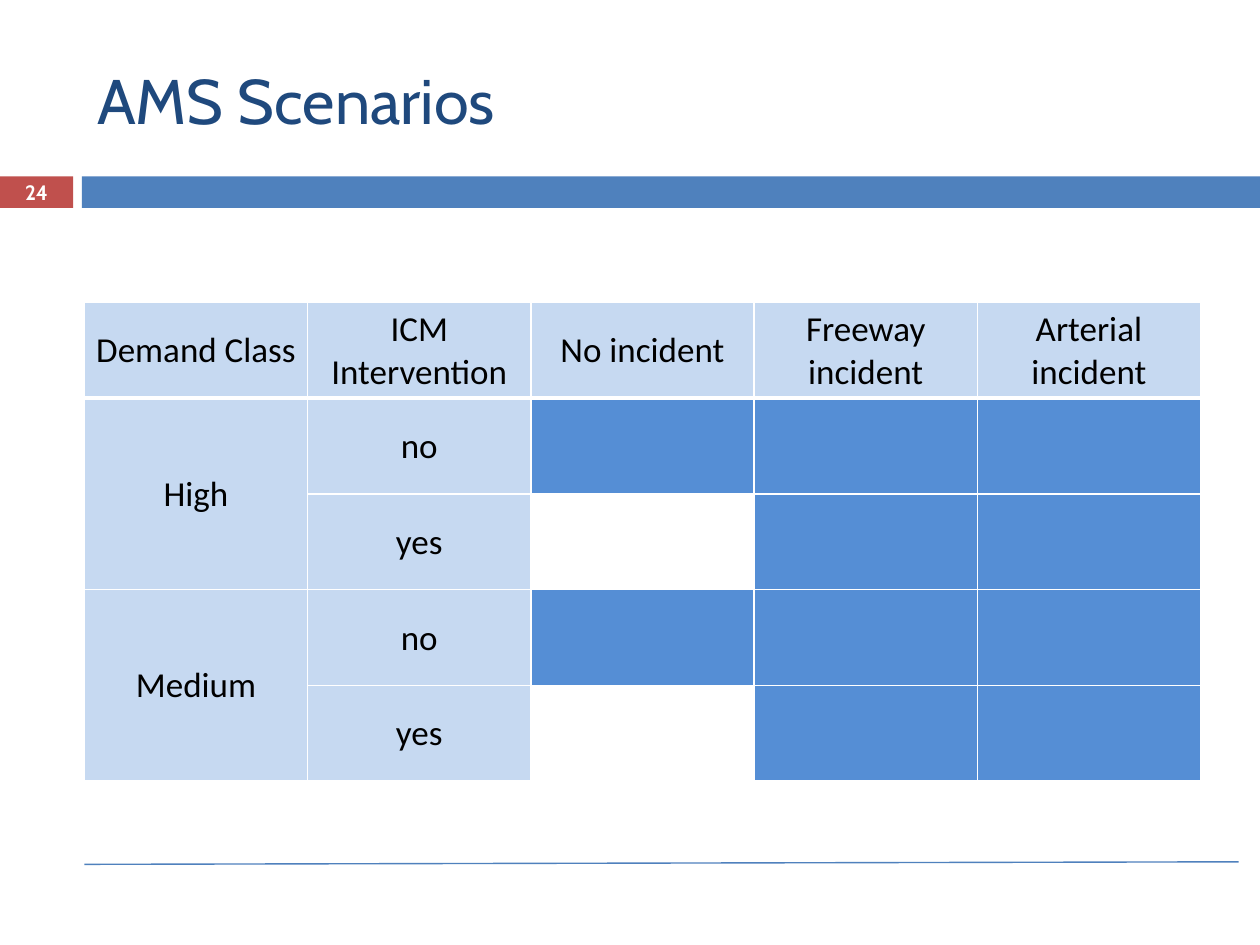
from lxml.etree import SubElement
from pptx import Presentation
from pptx.dml.color import RGBColor
from pptx.enum.shapes import MSO_CONNECTOR, MSO_SHAPE
from pptx.enum.text import MSO_ANCHOR, PP_ALIGN
from pptx.oxml.ns import qn
from pptx.util import Inches, Pt

COLORS = {
    "red": "C0504D",
    "blue": "4F81BD",
    "navy": "1F497D",
    "label": "C6D9F1",
    "scenario": "558ED5",
    "white": "FFFFFF",
    "black": "000000",
}
WIDTH, HEIGHT = Inches(10), Inches(7.5)
HEADERS = ["Demand Class", "ICM Intervention", "No incident",
           "Freeway incident", "Arterial incident"]
DEMAND_CLASSES = ["High", "Medium"]
INTERVENTIONS = ["no", "yes"]


def color(name):
    return RGBColor.from_string(COLORS[name])


def style_text(frame, text, font, size, ink, align, bold=False):
    para = frame.paragraphs[0]
    para.text = text
    para.alignment = align
    para.font.name = font
    para.font.size = Pt(size)
    para.font.bold = bold
    para.font.color.rgb = color(ink)


def add_block(page, left, top, width, height, fill):
    block = page.shapes.add_shape(MSO_SHAPE.RECTANGLE, left, top, width, height)
    block.shadow.inherit = False
    block.fill.solid()
    block.fill.fore_color.rgb = color(fill)
    block.line.fill.background()
    return block


def add_title(page, left, top, width, height):
    title = page.shapes.title
    title.left, title.top, title.width, title.height = left, top, width, height
    title.text_frame.vertical_anchor = MSO_ANCHOR.MIDDLE
    style_text(title.text_frame, "AMS Scenarios", "Cabin", 36, "navy", PP_ALIGN.LEFT)


def add_band(page, left, top, width, height):
    number_width = int(width * 0.058)
    bar_left = int(width * 0.065)
    number = add_block(page, left, top, number_width, height, "red")
    add_block(page, left + bar_left, top, width - bar_left, height, "blue")
    frame = number.text_frame
    frame.margin_top = frame.margin_bottom = 0
    frame.vertical_anchor = MSO_ANCHOR.MIDDLE
    style_text(frame, "24", "Cabin", 11.9, "white", PP_ALIGN.CENTER, bold=True)


def add_footer_line(page, left, top, width, rise):
    line = page.shapes.add_connector(
        MSO_CONNECTOR.STRAIGHT, left, top, left + width, top - rise)
    line.line.color.rgb = color("blue")
    line.line.width = Pt(0.79)
    SubElement(line._element.spPr, qn("a:effectLst"))


def add_borders(cell, bottom):
    properties = cell._tc.get_or_add_tcPr()
    for side, points in (("L", 1), ("R", 1), ("T", 1), ("B", bottom)):
        border = SubElement(properties, qn(f"a:ln{side}"), w=str(Pt(points)))
        fill = SubElement(border, qn("a:solidFill"))
        SubElement(fill, qn("a:srgbClr"), val=COLORS["white"])


def style_cell(cell, text, fill, bottom):
    add_borders(cell, bottom)
    if fill:
        cell.fill.solid()
        cell.fill.fore_color.rgb = color(fill)
    else:
        cell.fill.background()
    if text:
        cell.vertical_anchor = MSO_ANCHOR.MIDDLE
        cell.margin_left = cell.margin_right = cell.margin_top = Inches(0.01)
        cell.margin_bottom = 0
        style_text(cell.text_frame, text, "Calibri", 20, "black", PP_ALIGN.CENTER)


def add_scenarios(page, left, top, width, height):
    rows = [HEADERS]
    for demand in DEMAND_CLASSES:
        for index, intervention in enumerate(INTERVENTIONS):
            rows.append(["" if index else demand, intervention, "", "", ""])
    table = page.shapes.add_table(
        len(rows), len(HEADERS), left, top, width, height).table
    table.first_row = table.horz_banding = False
    for row, texts in enumerate(rows):
        for column, text in enumerate(texts):
            if row == 0 or column < 2:
                fill = "label"
            elif column == 2 and texts[1] == "yes":
                fill = None
            else:
                fill = "scenario"
            style_cell(table.cell(row, column), text, fill, 1 if row else 3)
    for row in range(1, len(rows), len(INTERVENTIONS)):
        table.cell(row, 0).merge(table.cell(row + len(INTERVENTIONS) - 1, 0))


def main():
    deck = Presentation()
    deck.slide_width, deck.slide_height = WIDTH, HEIGHT
    page = deck.slides.add_slide(deck.slide_layouts[5])
    left = int(WIDTH * 0.067)
    add_band(page, 0, Inches(1.4), WIDTH, Inches(0.25))
    add_footer_line(page, left, Inches(6.86), int(WIDTH * 0.916), Inches(0.02))
    add_title(page, left, Inches(0.25), int(WIDTH * 0.892), Inches(1.08))
    add_scenarios(page, left, Inches(2.4), int(WIDTH * 0.886), Inches(3.8))
    deck.save("out.pptx")


if __name__ == "__main__":
    main()
